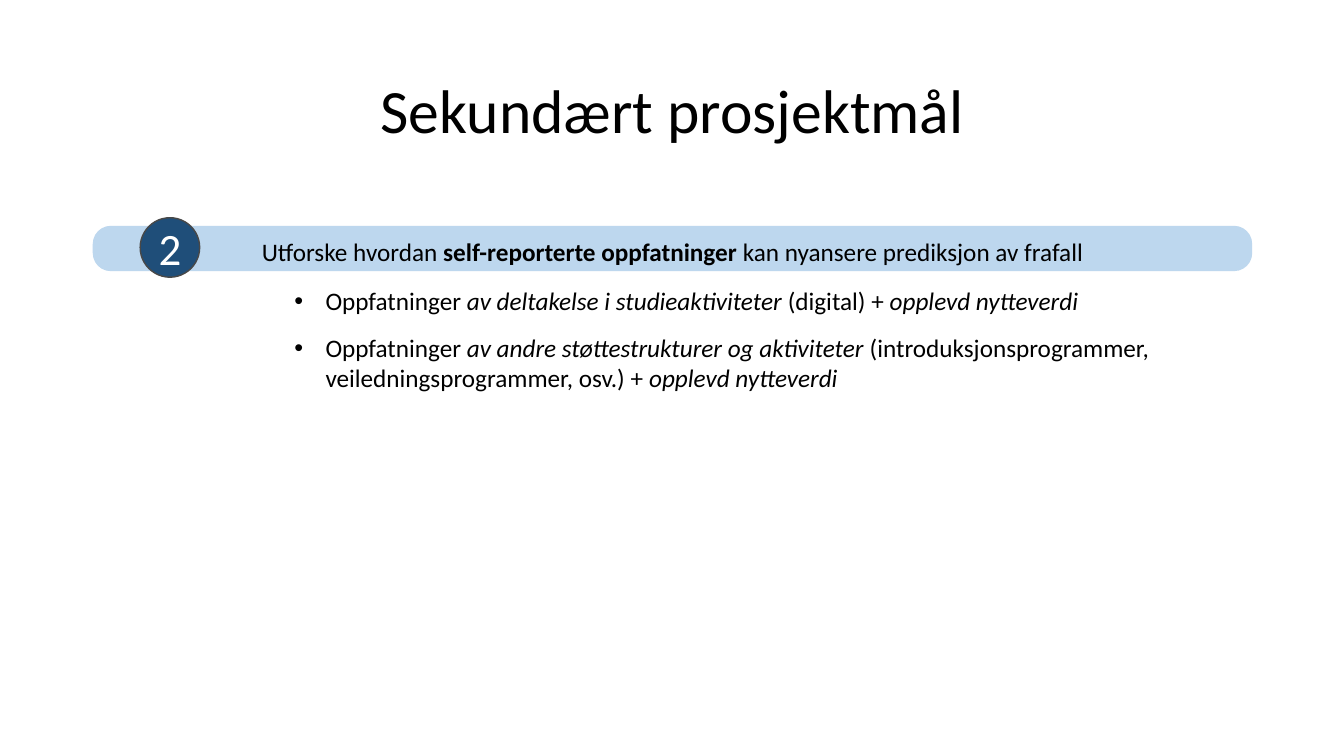
"""Builds the slide on the secondary project goal."""
from lxml import etree
from pptx import Presentation
from pptx import util as u
from pptx.dml.color import RGBColor
from pptx.enum import shapes, text
from pptx.oxml import ns


def rgb(code):
    return RGBColor.from_string(code)


def write(para, content, size=18, color="000000", font="Calibri", bold=False, italic=False):
    span = para.add_run()
    span.text = content
    span.font.name = font
    span.font.size = u.Pt(size)
    span.font.color.rgb = rgb(color)
    span.font.bold = bold
    span.font.italic = italic


class SlideBuilder:
    def __init__(self, page):
        self.page = page
        self.bar_fill = "BDD7EE"
        self.badge_fill = "1F4E79"
        self.badge_line = "484848"

    def frame(self, box, anchor):
        box.text_frame.word_wrap = True
        box.text_frame.vertical_anchor = anchor
        return box.text_frame

    def text_box(self, place, anchor=text.MSO_ANCHOR.TOP):
        box = self.page.shapes.add_textbox(*map(u.Inches, place))
        return self.frame(box, anchor)

    def shape(self, kind, place, fill, line=None):
        box = self.page.shapes.add_shape(kind, *map(u.Inches, place))
        box.shadow.inherit = False
        box.fill.solid()
        box.fill.fore_color.rgb = rgb(fill)
        if line:
            box.line.color.rgb = rgb(line)
            box.line.width = u.Pt(1)
        else:
            box.line.fill.background()
        return box

    def title(self, place, content):
        para = self.text_box(place, text.MSO_ANCHOR.MIDDLE).paragraphs[0]
        para.alignment = text.PP_ALIGN.CENTER
        para.line_spacing = 0.9
        write(para, content, size=44)

    def bar(self, place, spans):
        box = self.shape(shapes.MSO_SHAPE.ROUNDED_RECTANGLE, place, self.bar_fill)
        box.adjustments[0] = 0.4
        para = self.frame(box, text.MSO_ANCHOR.TOP).paragraphs[0]
        para.alignment = text.PP_ALIGN.CENTER
        for content, style in spans:
            write(para, content, **style)

    def badge(self, place, content):
        box = self.shape(shapes.MSO_SHAPE.OVAL, place, self.badge_fill, self.badge_line)
        frame = self.frame(box, text.MSO_ANCHOR.MIDDLE)
        frame.margin_left = frame.margin_right = 0
        frame.margin_top = frame.margin_bottom = 0
        para = frame.paragraphs[0]
        para.alignment = text.PP_ALIGN.CENTER
        write(para, content, size=32, color="FFFFFF")

    def bullets(self, place, items):
        frame = self.text_box(place)
        for index, spans in enumerate(items):
            para = frame.add_paragraph() if index else frame.paragraphs[0]
            para.level = 1
            para.space_before = u.Pt(12)
            props = para._p.get_or_add_pPr()
            props.set("marL", str(u.Inches(0.81)))
            props.set("indent", str(u.Inches(-0.31)))
            etree.SubElement(props, ns.qn("a:buFont"), typeface="Arial")
            etree.SubElement(props, ns.qn("a:buChar"), char="•")
            for content, style in spans:
                write(para, content, **style)


def main():
    deck = Presentation()
    deck.slide_width, deck.slide_height = u.Inches(13.33), u.Inches(7.5)
    slide = SlideBuilder(deck.slides.add_slide(deck.slide_layouts[6]))
    plain, bold, italic = {}, {"bold": True}, {"italic": True}

    slide.title((0.92, 0.4, 11.5, 1.45), "Sekundært prosjektmål")
    slide.bar((0.92, 2.24, 11.5, 0.45), [
        ("Utforske hvordan ", plain),
        ("self-reporterte oppfatninger ", bold),
        ("kan nyansere prediksjon av frafall", plain),
    ])
    slide.badge((1.39, 2.16, 0.59, 0.59), "2")
    slide.bullets((2.32, 2.78, 9.39, 1.48), [
        [
            ("Oppfatninger ", plain),
            ("av deltakelse i studieaktiviteter ", italic),
            ("(digital) + ", plain),
            ("opplevd nytteverdi", italic),
        ],
        [
            ("Oppfatninger ", plain),
            ("av andre støttestrukturer og aktiviteter ", italic),
            ("(introduksjonsprogrammer, veiledningsprogrammer, osv.) + ", plain),
            ("opplevd nytteverdi", italic),
        ],
    ])
    deck.save("out.pptx")


if __name__ == "__main__":
    main()
